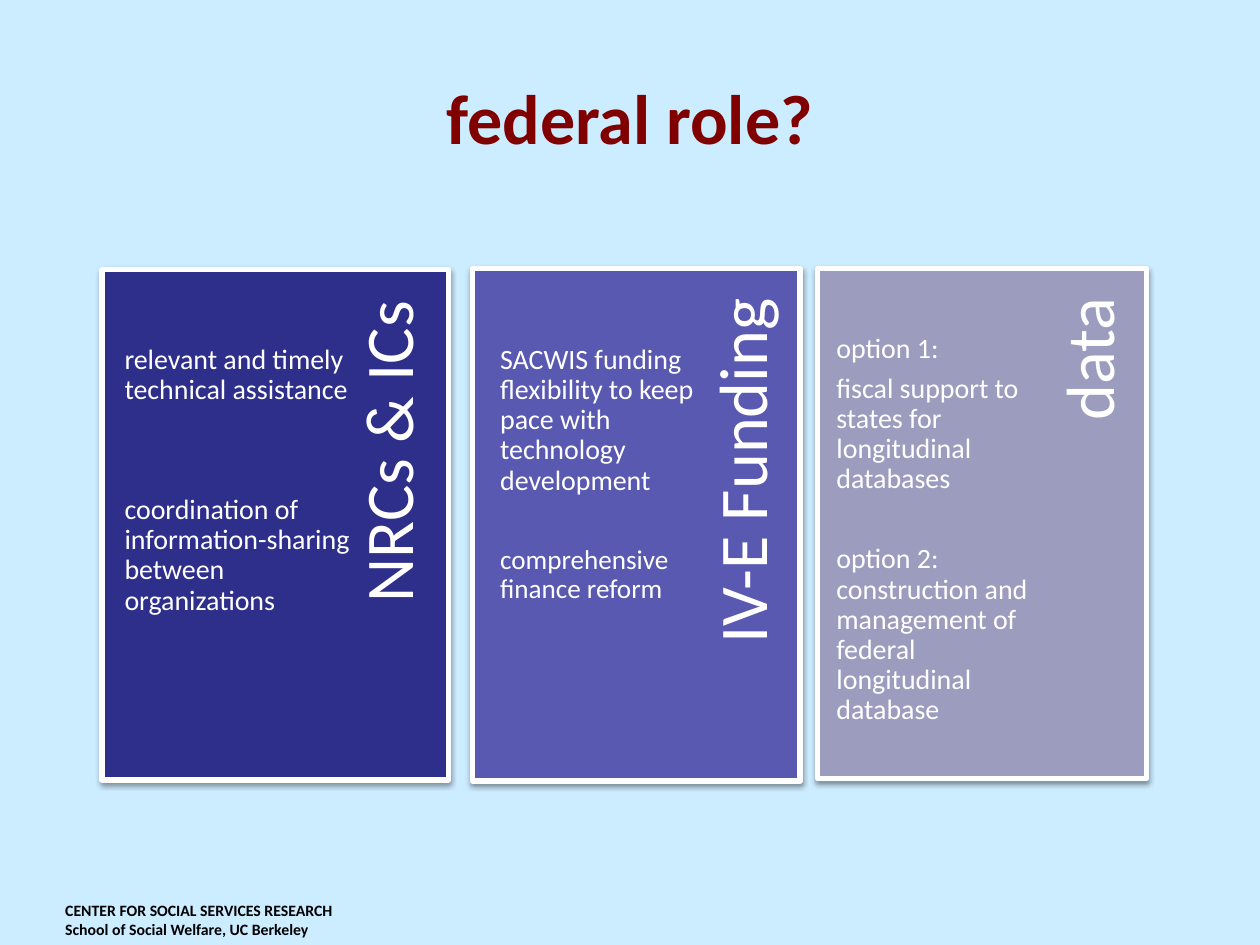
import dataclasses
import typing

import lxml.etree
import pptx
import pptx.dml.color
import pptx.enum.shapes
import pptx.enum.text
import pptx.oxml.ns
import pptx.util

Pt = pptx.util.Pt
PP_ALIGN = pptx.enum.text.PP_ALIGN
MSO_ANCHOR = pptx.enum.text.MSO_ANCHOR

WHITE = "FFFFFF"
BLANK_LINE = 22.9
SPACE_AFTER = 5.6


@dataclasses.dataclass(frozen=True)
class Box:
    left: float
    top: float
    width: float
    height: float

    def lengths(self) -> tuple:
        return tuple(Pt(value) for value in dataclasses.astuple(self))


@dataclasses.dataclass(frozen=True)
class Entry:
    text: str
    size: float = 16
    blank_lines: int = 0


@dataclasses.dataclass(frozen=True)
class Card:
    heading: str
    fill: str
    panel: Box
    heading_box: Box
    body_box: Box
    entries: tuple


CARDS = (
    Card(
        "NRCs & ICs", "2E2E8B",
        Box(58.3, 154.1, 198, 291.6),
        Box(94.3, 259.9, 262.1, 51.8),
        Box(66.2, 192.2, 144, 223.2),
        (
            Entry("relevant and timely technical assistance"),
            Entry("coordination of information-sharing between organizations", blank_lines=2),
        ),
    ),
    Card(
        "IV-E Funding", "5959B1",
        Box(270, 153.4, 187.2, 293),
        Box(295.9, 260.6, 263.5, 49),
        Box(280.8, 192.2, 130.3, 221),
        (
            Entry("SACWIS funding flexibility to keep pace with technology development"),
            Entry("comprehensive finance reform", size=15.5, blank_lines=1),
        ),
    ),
    Card(
        "data", "9C9CBF",
        Box(467.3, 153.4, 187.9, 291.6),
        Box(494.6, 259.9, 262.8, 49),
        Box(473, 185.8, 129.6, 176.4),
        (
            Entry("option 1:"),
            Entry("fiscal support to states for longitudinal databases"),
            Entry(
                "option 2: construction and management of federal longitudinal database",
                blank_lines=1,
            ),
        ),
    ),
)


def color(value: str) -> pptx.dml.color.RGBColor:
    return pptx.dml.color.RGBColor.from_string(value)


def apply_format(target: typing.Any, values: dict) -> None:
    for name, value in values.items():
        setattr(target, name, value)


def format_font(font: typing.Any, size: float, fill: str, bold: bool = False) -> None:
    apply_format(font, {"name": "Calibri", "size": Pt(size), "bold": bold})
    font.color.rgb = color(fill)


def format_frame(frame: typing.Any, margins: tuple, anchor: MSO_ANCHOR) -> None:
    names = ("margin_left", "margin_top", "margin_right", "margin_bottom")
    values = dict(zip(names, map(Pt, margins)))
    apply_format(frame, {**values, "word_wrap": True, "vertical_anchor": anchor})


def add_soft_shadow(shape: typing.Any) -> None:
    shape.shadow.inherit = False
    tag = pptx.oxml.ns.qn
    effects = shape._element.spPr.find(tag("a:effectLst"))
    shadow = lxml.etree.SubElement(
        effects, tag("a:outerShdw"),
        blurRad=str(Pt(3.1)), dist=str(Pt(1.6)), dir="5400000", rotWithShape="0",
    )
    shade = lxml.etree.SubElement(shadow, tag("a:srgbClr"), val="000000")
    lxml.etree.SubElement(shade, tag("a:alpha"), val="38000")


def draw_panel(slide: typing.Any, card: Card) -> None:
    panel = slide.shapes.add_shape(
        pptx.enum.shapes.MSO_SHAPE.RECTANGLE, *card.panel.lengths()
    )
    panel.fill.solid()
    panel.fill.fore_color.rgb = color(card.fill)
    panel.line.color.rgb = color(WHITE)
    panel.line.width = Pt(3)
    add_soft_shadow(panel)


def draw_heading(slide: typing.Any, card: Card) -> None:
    heading = slide.shapes.add_textbox(*card.heading_box.lengths())
    heading.rotation = 270
    format_frame(heading.text_frame, (11.5, 0, 17.3, 3.6), MSO_ANCHOR.MIDDLE)
    paragraph = heading.text_frame.paragraphs[0]
    apply_format(
        paragraph,
        {"text": card.heading, "alignment": PP_ALIGN.RIGHT, "line_spacing": 0.9},
    )
    format_font(paragraph.font, 39, WHITE)


def draw_body(slide: typing.Any, card: Card) -> None:
    frame = slide.shapes.add_textbox(*card.body_box.lengths()).text_frame
    format_frame(frame, (5, 5, 5, 5), MSO_ANCHOR.TOP)
    for index, entry in enumerate(card.entries):
        paragraph = frame.add_paragraph() if index else frame.paragraphs[0]
        apply_format(
            paragraph,
            {
                "text": entry.text,
                "line_spacing": 0.9,
                "space_before": Pt(entry.blank_lines * BLANK_LINE),
                "space_after": Pt(SPACE_AFTER),
            },
        )
        format_font(paragraph.font, entry.size, WHITE)


def draw_title(slide: typing.Any) -> None:
    title = slide.shapes.title
    names = ("left", "top", "width", "height")
    apply_format(title, dict(zip(names, Box(36, 21.6, 648, 90).lengths())))
    title.text_frame.vertical_anchor = MSO_ANCHOR.MIDDLE
    paragraph = title.text_frame.paragraphs[0]
    apply_format(paragraph, {"text": "federal role?", "alignment": PP_ALIGN.CENTER})
    format_font(paragraph.font, 40, "800000", bold=True)


def draw_affiliation(slide: typing.Any) -> None:
    frame = slide.shapes.add_textbox(*Box(30.2, 511.2, 210.2, 28.8).lengths()).text_frame
    format_frame(frame, (7.2, 3.6, 7.2, 3.6), MSO_ANCHOR.TOP)
    paragraph = frame.paragraphs[0]
    paragraph.text = "CENTER FOR SOCIAL SERVICES RESEARCH\vSchool of Social Welfare, UC Berkeley"
    format_font(paragraph.font, 9, "000000", bold=True)


def main() -> None:
    presentation = pptx.Presentation()
    apply_format(presentation, {"slide_width": Pt(720), "slide_height": Pt(540)})
    slide = presentation.slides.add_slide(presentation.slide_layouts[5])
    slide.background.fill.solid()
    slide.background.fill.fore_color.rgb = color("CCECFF")
    draw_affiliation(slide)
    draw_title(slide)
    for card in CARDS:
        draw_panel(slide, card)
        draw_heading(slide, card)
        draw_body(slide, card)
    presentation.save("out.pptx")


if __name__ == "__main__":
    main()
